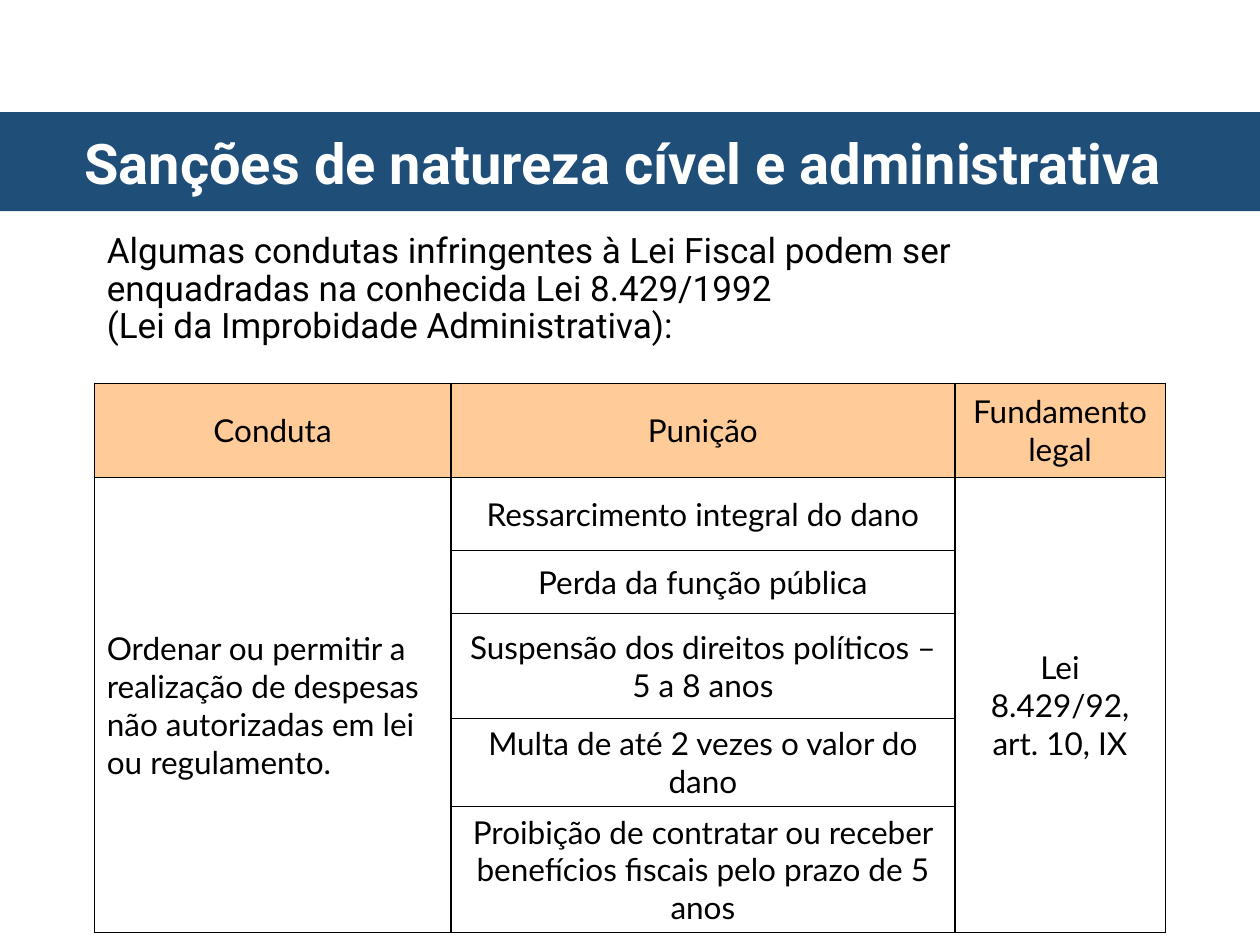
from pptx import Presentation
from pptx.dml.color import RGBColor
from pptx.enum.shapes import MSO_SHAPE as Shape
from pptx.enum.text import MSO_ANCHOR as Anchor, PP_ALIGN as Align
from pptx.oxml import parse_xml
from pptx.oxml.ns import nsdecls
from pptx.util import Cm, Pt

NAVY, PEACH, WHITE, BLACK = "1F4E79", "FFCC99", "FFFFFF", "000000"

COLUMN_WIDTHS = [7.19, 10.16, 4.24]
ROW_HEIGHTS = [1.9, 1.47, 1.27, 2.11, 1.78, 2.54]
HEADERS = ["Conduta", "Punição", "Fundamento legal"]
CONDUCT = "Ordenar ou permitir a realização de despesas não autorizadas em lei ou regulamento."
PENALTIES = [
    "Ressarcimento integral do dano",
    "Perda da função pública",
    "Suspensão dos direitos políticos – 5 a 8 anos",
    "Multa de até 2 vezes o valor do dano",
    "Proibição de contratar ou receber benefícios fiscais pelo prazo de 5 anos",
]
LEGAL_BASIS = "Lei 8.429/92, art. 10, IX"


def color(value):
    return RGBColor.from_string(value)


def add_run(p, text, size, font, fill, bold=False):
    r = p.add_run()
    r.text = text
    r.font.size = Pt(size)
    r.font.name = font
    r.font.bold = bold
    r.font.color.rgb = color(fill)


def add_intro(s, x, y, w, h):
    sp = s.shapes.title
    sp.left, sp.top, sp.width, sp.height = Cm(x), Cm(y), Cm(w), Cm(h)
    tf = sp.text_frame
    tf.word_wrap = True
    tf.vertical_anchor = Anchor.TOP
    p = tf.paragraphs[0]
    p.alignment = Align.LEFT
    p.line_spacing = 0.9
    add_run(p, "Algumas condutas infringentes à Lei Fiscal podem ser "
               "enquadradas na conhecida Lei 8.429/1992", 20, "Roboto", BLACK)
    p.add_line_break()
    add_run(p, "(Lei da Improbidade Administrativa):", 20, "Roboto", BLACK)


def set_borders(cell, width=1):
    tc_pr = cell._tc.get_or_add_tcPr()
    for side in "LRTB":
        tc_pr.append(parse_xml(
            f'<a:ln{side} {nsdecls("a")} w="{Pt(width)}"><a:solidFill>'
            f'<a:srgbClr val="{BLACK}"/></a:solidFill></a:ln{side}>'))


def fill_cell(cell, text, align=Align.CENTER):
    cell.vertical_anchor = Anchor.MIDDLE
    p = cell.text_frame.paragraphs[0]
    p.alignment = align
    add_run(p, text, 18, "Lato", BLACK)


def add_sanctions_table(s, x, y):
    table = s.shapes.add_table(
        len(ROW_HEIGHTS), len(COLUMN_WIDTHS), Cm(x), Cm(y),
        Cm(sum(COLUMN_WIDTHS)), Cm(sum(ROW_HEIGHTS))).table
    table.first_row = table.horz_banding = False
    for column, width in zip(table.columns, COLUMN_WIDTHS):
        column.width = Cm(width)
    for row, height in zip(table.rows, ROW_HEIGHTS):
        row.height = Cm(height)

    # Borders and fills
    for i, row in enumerate(table.rows):
        for cell in row.cells:
            set_borders(cell)
            cell.fill.solid()
            cell.fill.fore_color.rgb = color(WHITE if i else PEACH)

    # Header and penalties
    for j, header in enumerate(HEADERS):
        fill_cell(table.cell(0, j), header)
    for i, penalty in enumerate(PENALTIES, 1):
        fill_cell(table.cell(i, 1), penalty)

    # Conduct and legal basis span all the penalties
    for j, text, align in [(0, CONDUCT, Align.LEFT), (2, LEGAL_BASIS, Align.CENTER)]:
        table.cell(1, j).merge(table.cell(len(PENALTIES), j))
        fill_cell(table.cell(1, j), text, align)


def add_banner(s, x, y, w, h):
    sp = s.shapes.add_shape(Shape.RECTANGLE, Cm(x), Cm(y), Cm(w), Cm(h))
    sp.shadow.inherit = False
    sp.fill.solid()
    sp.fill.fore_color.rgb = color(NAVY)
    sp.line.fill.background()
    tf = sp.text_frame
    tf.word_wrap = True
    tf.vertical_anchor = Anchor.MIDDLE
    p = tf.paragraphs[0]
    p.alignment = Align.CENTER
    add_run(p, "Sanções de natureza cível e administrativa ", 32, "Roboto", WHITE, bold=True)


def main():
    prs = Presentation()
    prs.slide_width, prs.slide_height = Cm(25.4), Cm(19.05)
    s = prs.slides.add_slide(prs.slide_layouts[5])
    add_intro(s, 1.9, 4.57, 21.59, 3.18)
    add_sanctions_table(s, 1.9, 7.73)
    add_banner(s, 0, 2.26, 25.4, 2)
    prs.save("out.pptx")


if __name__ == "__main__":
    main()
